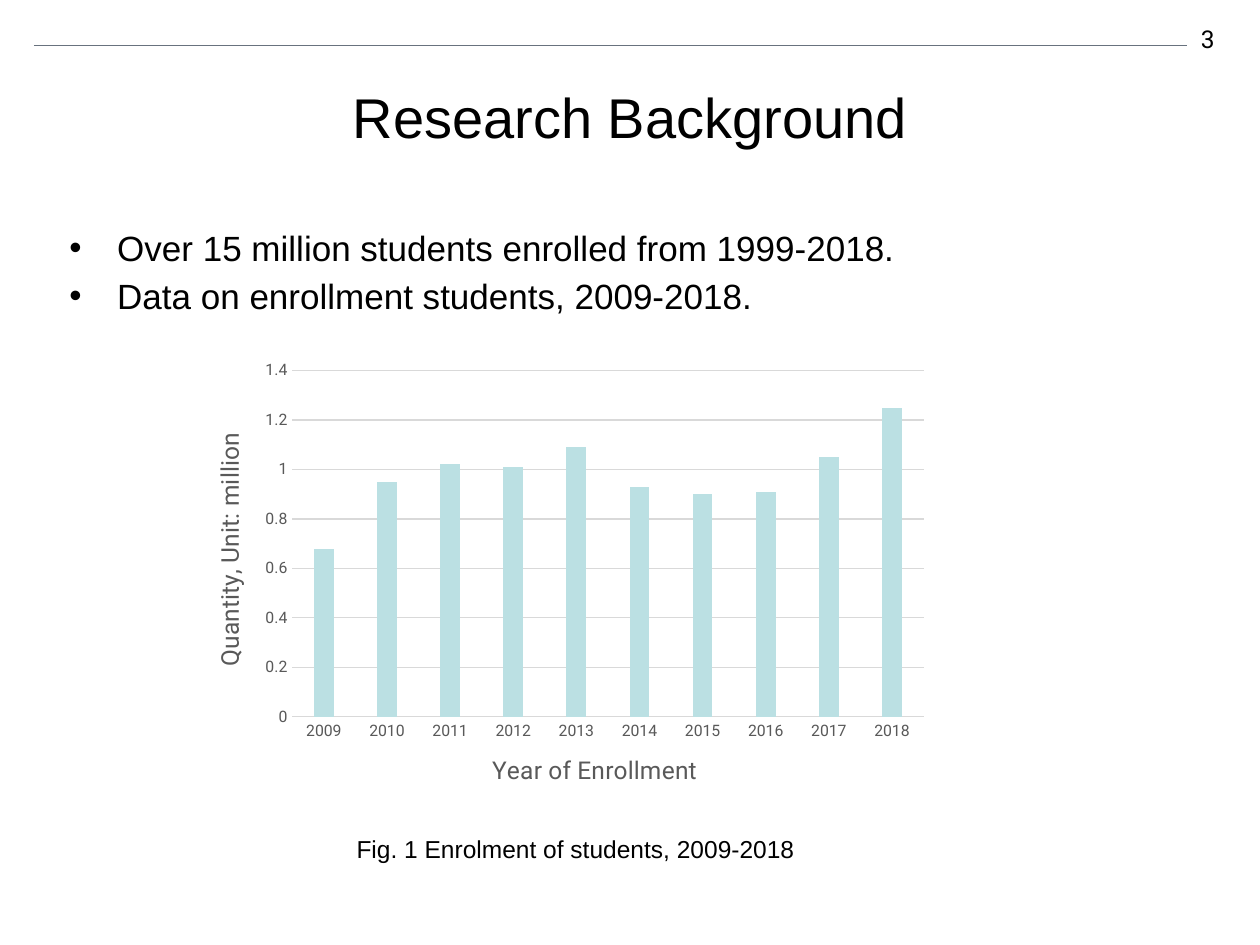
from lxml.etree import SubElement
from pptx import Presentation
from pptx.chart.data import CategoryChartData
from pptx.dml.color import RGBColor
from pptx.enum.chart import XL_CHART_TYPE as ChartType, XL_TICK_MARK as TickMark
from pptx.enum.shapes import MSO_CONNECTOR as Connector
from pptx.enum.text import MSO_ANCHOR as Anchor, MSO_AUTO_SIZE as AutoSize, PP_ALIGN as Align
from pptx.oxml import parse_xml
from pptx.oxml.ns import nsdecls, qn
from pptx.util import Pt

PX = 9144  # EMU; 100 px to the inch
BLACK = RGBColor(0x00, 0x00, 0x00)
RULE_GREY = RGBColor(0x68, 0x72, 0x7E)
LABEL_GREY = RGBColor(0x59, 0x59, 0x59)
GRID_GREY = RGBColor(0xD9, 0xD9, 0xD9)
BAR_TEAL = RGBColor(0xBB, 0xE0, 0xE3)
INSET = 5

BULLETS = [
    "Over 15 million students enrolled from 1999-2018.",
    "Data on enrollment students, 2009-2018.",
]
ENROLLMENT = [0.68, 0.95, 1.02, 1.01, 1.09, 0.93, 0.9, 0.91, 1.05, 1.25]
FIRST_YEAR = 2009


def emu(box):
    return [length * PX for length in box]


def style_font(font, size, color=BLACK, name="Arial"):
    font.name = name
    font.size = Pt(size)
    font.bold = False
    font.color.rgb = color


def prepare_frame(shape, box, anchor=Anchor.TOP, wrap=True):
    shape.left, shape.top, shape.width, shape.height = emu(box)
    frame = shape.text_frame
    frame.margin_left = frame.margin_right = INSET * PX
    frame.margin_top = frame.margin_bottom = INSET * PX
    frame.auto_size = AutoSize.NONE
    frame.vertical_anchor = anchor
    frame.word_wrap = wrap
    return frame


def add_run(paragraph, text, size, name="Arial", color=BLACK):
    run = paragraph.add_run()
    run.text = text
    style_font(run.font, size, color, name)


def add_header(slide, box):
    """Page number at the right end of the box, with a rule that stops before it."""
    left, top, width, height = box
    number_box = (left + width - 26, top, 22, height)
    middle = top + height // 2 + 6
    rule = slide.shapes.add_connector(
        Connector.STRAIGHT, *emu((left, middle, number_box[0] - INSET, middle)))
    rule.line.color.rgb = RULE_GREY
    rule.line.width = Pt(0.25)
    SubElement(rule._element.spPr, qn("a:effectLst"))

    number = slide.shapes.add_textbox(*emu(number_box))
    paragraph = prepare_frame(number, number_box, wrap=False).paragraphs[0]
    paragraph.alignment = Align.RIGHT
    add_run(paragraph, "3", 14, "Roboto")


def fill_title(slide, box):
    paragraph = prepare_frame(slide.shapes.title, box, Anchor.MIDDLE).paragraphs[0]
    paragraph.alignment = Align.CENTER
    add_run(paragraph, "Research Background", 32)


def fill_bullets(slide, box):
    frame = prepare_frame(slide.placeholders[1], box)
    for index, text in enumerate(BULLETS):
        paragraph = frame.paragraphs[0] if index == 0 else frame.add_paragraph()
        properties = paragraph._p.get_or_add_pPr()
        properties.set("marL", str(38 * PX))
        properties.set("indent", str(-38 * PX))
        SubElement(properties, qn("a:buFont"), typeface="Arial")
        SubElement(properties, qn("a:buChar"), char="•")
        paragraph.space_before = Pt(3 if index else 0)
        add_run(paragraph, text, 20)


def set_layout(parent, box, **lengths):
    """Place a chart part at px lengths relative to the chart box."""
    layout = parent.find(qn("c:layout"))
    if layout is None:
        layout = parse_xml(f"<c:layout {nsdecls('c')}/>")
        parent.insert(0, layout)
    manual = SubElement(layout, qn("c:manualLayout"))
    if "w" in lengths:
        SubElement(manual, qn("c:layoutTarget"), val="inner")
    for side in "xy":
        SubElement(manual, qn(f"c:{side}Mode"), val="edge")
    for side, length in lengths.items():
        whole = box[2] if side in "xw" else box[3]
        SubElement(manual, qn(f"c:{side}"), val=f"{length / whole:.4f}")


def style_axis(axis, title, box, x, y):
    axis.major_tick_mark = axis.minor_tick_mark = TickMark.NONE
    style_font(axis.tick_labels.font, 9, LABEL_GREY, "Roboto")
    paragraph = axis.axis_title.text_frame.paragraphs[0]
    add_run(paragraph, title, 14, "Roboto", LABEL_GREY)
    set_layout(axis.axis_title._element, box, x=x, y=y)


def add_enrollment_chart(slide, box):
    data = CategoryChartData()
    data.categories = [str(FIRST_YEAR + index) for index in range(len(ENROLLMENT))]
    data.add_series("Series 1", ENROLLMENT)
    chart = slide.shapes.add_chart(ChartType.COLUMN_CLUSTERED, *emu(box), data).chart
    chart.has_legend = False
    chart.has_title = False
    style_font(chart.font, 10, BLACK, "Roboto")

    plot = chart.plots[0]
    plot.vary_by_categories = False
    plot.gap_width = 219
    plot.overlap = -27
    bars = plot.series[0].format.fill
    bars.solid()
    bars.fore_color.rgb = BAR_TEAL
    set_layout(chart._chartSpace.chart.plotArea, box, x=84, y=14, w=501, h=275)

    years, quantity = chart.category_axis, chart.value_axis
    style_axis(years, "Year of Enrollment", box, 239, 314)
    style_axis(quantity, "Quantity, Unit: million", box, 17, 60)
    quantity.axis_title.text_frame._txBody.bodyPr.set("rot", "-5400000")
    quantity.minimum_scale, quantity.maximum_scale = 0, 1.4
    quantity.major_unit = 0.2
    quantity.tick_labels.number_format = "General"
    quantity.tick_labels.number_format_is_linked = False
    quantity.format.line.fill.background()
    for line in (years.format.line, quantity.major_gridlines.format.line):
        line.color.rgb = GRID_GREY
        line.width = Pt(0.75)


def add_caption(slide, box):
    caption = slide.shapes.add_textbox(*emu(box))
    paragraph = prepare_frame(caption, box).paragraphs[0]
    add_run(paragraph, "Fig. 1 Enrolment of students, 2009-2018", 14)


def main():
    presentation = Presentation()
    presentation.slide_width, presentation.slide_height = emu((1000, 750))
    slide = presentation.slides.add_slide(presentation.slide_layouts[1])
    add_header(slide, (27, 14, 946, 32))
    fill_title(slide, (50, 30, 900, 125))
    fill_bullets(slide, (50, 175, 900, 495))
    add_caption(slide, (278, 657, 370, 34))
    add_enrollment_chart(slide, (148, 280, 598, 366))
    presentation.save("out.pptx")


if __name__ == "__main__":
    main()
